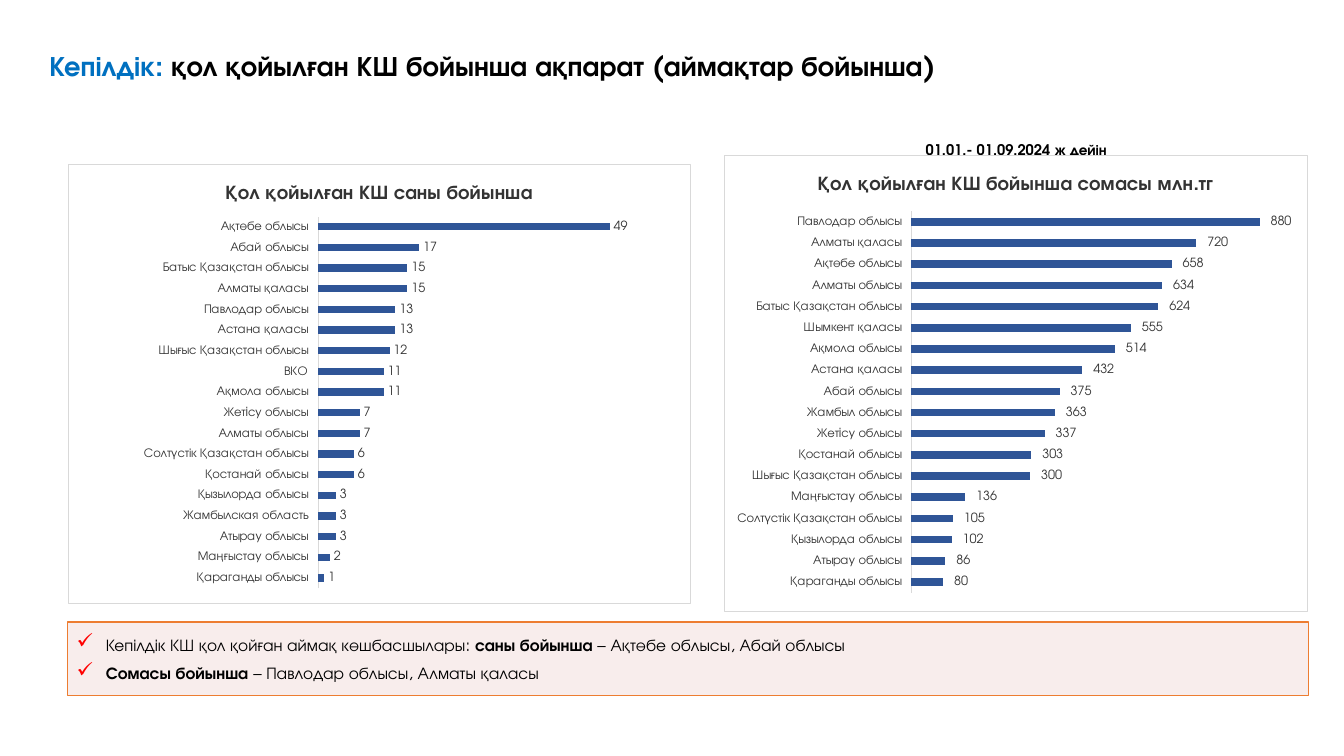
from lxml.etree import SubElement
from pptx import Presentation
from pptx.chart.data import CategoryChartData
from pptx.dml.color import RGBColor
from pptx.enum.chart import XL_CHART_TYPE, XL_LABEL_POSITION, XL_TICK_LABEL_POSITION, XL_TICK_MARK
from pptx.enum.shapes import MSO_SHAPE
from pptx.enum.text import MSO_ANCHOR, PP_ALIGN
from pptx.oxml import parse_xml
from pptx.oxml.ns import nsdecls, qn
from pptx.util import Inches, Pt

FONT = "TeX Gyre Adventor"
COLORS = {
    "black": "000000", "blue": "0070C0", "bar": "2F5597", "label": "333333",
    "border": "D9D9D9", "white": "FFFFFF", "pink": "F2DCDB", "orange": "ED7D31", "red": "FF0000",
}
AMOUNT_FORMAT = r'_-* #\ ##0_р_._-;\-* #\ ##0_р_._-;_-* "-"??_р_._-;_-@_-'


def color(name):
    return RGBColor.from_string(COLORS[name])


def style_font(font, size, color_name, bold=False):
    font.name = FONT
    font.size = Pt(size)
    font.bold = bold
    font.color.rgb = color(color_name)


deck = Presentation()
deck.slide_width = Inches(13.33)
deck.slide_height = Inches(7.5)
page = deck.slides.add_slide(deck.slide_layouts[5])

title = page.shapes.title
title.left, title.top, title.width, title.height = Inches(0.39), Inches(0.43), Inches(9.14), Inches(0.77)
title.text_frame.word_wrap = True
title.text_frame.vertical_anchor = MSO_ANCHOR.TOP
para = title.text_frame.paragraphs[0]
para.alignment = PP_ALIGN.LEFT
style_font(para.font, 20, "black", True)
for text, color_name in [("Кепілдік: ", "blue"), ("қол қойылған КШ бойынша ақпарат (аймақтар бойынша)", "black")]:
    span = para.add_run()
    span.text = text
    style_font(span.font, 20, color_name, True)

period = page.shapes.add_textbox(Inches(9.04), Inches(1.35), Inches(2.68), Inches(0.28))
period.text_frame.word_wrap = True
period.text_frame.margin_left = Inches(0.14)
para = period.text_frame.paragraphs[0]
para.text = "01.01.- 01.09.2024 ж дейін"
style_font(para.font, 10.5, "black", True)

leaders = page.shapes.add_shape(MSO_SHAPE.RECTANGLE, Inches(0.67), Inches(6.17), Inches(12.31), Inches(0.73))
leaders.shadow.inherit = False
leaders.fill.solid()
leaders.fill.fore_color.rgb = color("pink")
SubElement(next(leaders.element.spPr.iter(qn("a:srgbClr"))), qn("a:alpha"), val="50000")
leaders.line.color.rgb = color("orange")
leaders.line.width = Pt(1)
frame = leaders.text_frame
frame.word_wrap = True
frame.vertical_anchor = MSO_ANCHOR.MIDDLE
frame.margin_left = frame.margin_right = Inches(0.08)
frame.margin_top = frame.margin_bottom = Inches(0.04)
LEADER_LINES = [
    [("Кепілдік КШ қол қойған аймақ көшбасшылары: ", False), ("саны бойынша", True),
     (" – Ақтөбе облысы, Абай облысы", False)],
    [("Сомасы бойынша ", True), ("– Павлодар облысы, Алматы қаласы", False)],
]
for index, line in enumerate(LEADER_LINES):
    para = frame.add_paragraph() if index else frame.paragraphs[0]
    para.alignment = PP_ALIGN.LEFT
    para.space_after = Pt(6)
    properties = para._p.get_or_add_pPr()
    properties.set("marL", str(Inches(0.3)))
    properties.set("indent", str(Inches(-0.29)))
    SubElement(SubElement(properties, qn("a:buClr")), qn("a:srgbClr"), val=COLORS["red"])
    SubElement(properties, qn("a:buSzPct"), val="125000")
    SubElement(properties, qn("a:buChar"), char="✓")
    style_font(para.font, 12, "black")
    for text, bold in line:
        span = para.add_run()
        span.text = text
        style_font(span.font, 12, "black", bold)

CHARTS = [
    {
        "title": "Қол қойылған КШ саны бойынша",
        "place": (0.67, 1.63, 6.18, 4.36), "plot": (0.402, 0.118, 0.574, 0.848),
        "maximum": 60, "format": "General",
        "regions": [
            ("Қараганды облысы", 1), ("Маңғыстау облысы", 2), ("Атырау облысы", 3),
            ("Жамбылская область", 3), ("Қызылорда облысы", 3), ("Қостанай облысы", 6),
            ("Солтүстік Қазақстан облысы", 6), ("Алматы облысы", 7), ("Жетiсу облысы", 7),
            ("Ақмола облысы", 11), ("ВКО", 11), ("Шығыс Қазақстан облысы", 12),
            ("Астана қаласы", 13), ("Павлодар облысы", 13), ("Алматы қаласы", 15),
            ("Батыс Қазақстан облысы", 15), ("Абай облысы", 17), ("Ақтөбе облысы", 49),
        ],
    },
    {
        "title": "Қол қойылған КШ бойынша сомасы млн.тг",
        "place": (7.18, 1.54, 5.79, 4.53), "plot": (0.321, 0.122, 0.679, 0.837),
        "maximum": 1000, "format": AMOUNT_FORMAT,
        "regions": [
            ("Қараганды облысы", 80), ("Атырау облысы", 86), ("Қызылорда облысы", 102),
            ("Солтүстік Қазақстан облысы", 105), ("Маңғыстау облысы", 136),
            ("Шығыс Қазақстан облысы", 300), ("Қостанай облысы", 303), ("Жетiсу облысы", 337),
            ("Жамбыл облысы", 363), ("Абай облысы", 375), ("Астана қаласы", 432),
            ("Ақмола облысы", 514), ("Шымкент қаласы", 555), ("Батыс Қазақстан облысы", 624),
            ("Алматы облысы", 634), ("Ақтөбе облысы", 658), ("Алматы қаласы", 720),
            ("Павлодар облысы", 880),
        ],
    },
]
for details in CHARTS:
    data = CategoryChartData(number_format=details["format"])
    data.categories = [region for region, value in details["regions"]]
    data.add_series("Series 1", [value for region, value in details["regions"]])
    place = [Inches(length) for length in details["place"]]
    chart = page.shapes.add_chart(XL_CHART_TYPE.BAR_CLUSTERED, *place, data).chart
    chart.has_legend = False
    chart.font.name = "Calibri"
    chart.font.size = Pt(10)
    chart.font.color.rgb = color("black")

    chart.has_title = True
    chart.chart_title.include_in_layout = False
    para = chart.chart_title.text_frame.paragraphs[0]
    span = para.add_run()
    span.text = details["title"]
    style_font(para.font, 14, "label", True)
    style_font(span.font, 14, "label", True)

    regions_axis = chart.category_axis
    regions_axis.major_tick_mark = XL_TICK_MARK.NONE
    regions_axis.tick_label_position = XL_TICK_LABEL_POSITION.LOW
    style_font(regions_axis.tick_labels.font, 9, "label")
    regions_axis.format.line.color.rgb = color("border")
    regions_axis.format.line.width = Pt(0.75)
    value_axis = chart.value_axis
    value_axis.minimum_scale = 0
    value_axis.maximum_scale = details["maximum"]
    value_axis.has_major_gridlines = False
    value_axis.visible = False

    bars = chart.plots[0]
    bars.gap_width = 182
    bars.vary_by_categories = False
    bars.series[0].format.fill.solid()
    bars.series[0].format.fill.fore_color.rgb = color("bar")
    labels = bars.series[0].data_labels
    labels.show_value = True
    labels.position = XL_LABEL_POSITION.OUTSIDE_END
    labels.number_format = details["format"]
    labels.number_format_is_linked = False
    style_font(labels.font, 9, "label")

    chart_space = chart._chartSpace
    plot_area = chart_space.chart.plotArea
    for old_layout in plot_area.findall(qn("c:layout")):
        plot_area.remove(old_layout)
    layout = parse_xml(f'<c:layout {nsdecls("c")}><c:manualLayout/></c:layout>')
    settings = [("layoutTarget", "inner"), ("xMode", "edge"), ("yMode", "edge")]
    settings += zip("xywh", details["plot"])
    for name, value in settings:
        SubElement(layout[0], qn(f"c:{name}"), val=str(value))
    plot_area.insert(0, layout)
    chart_space.chart.addnext(parse_xml(
        f'<c:spPr {nsdecls("c", "a")}><a:solidFill><a:srgbClr val="{COLORS["white"]}"/></a:solidFill>'
        f'<a:ln w="{Pt(0.75)}"><a:solidFill><a:srgbClr val="{COLORS["border"]}"/></a:solidFill></a:ln></c:spPr>'
    ))

deck.save("out.pptx")
